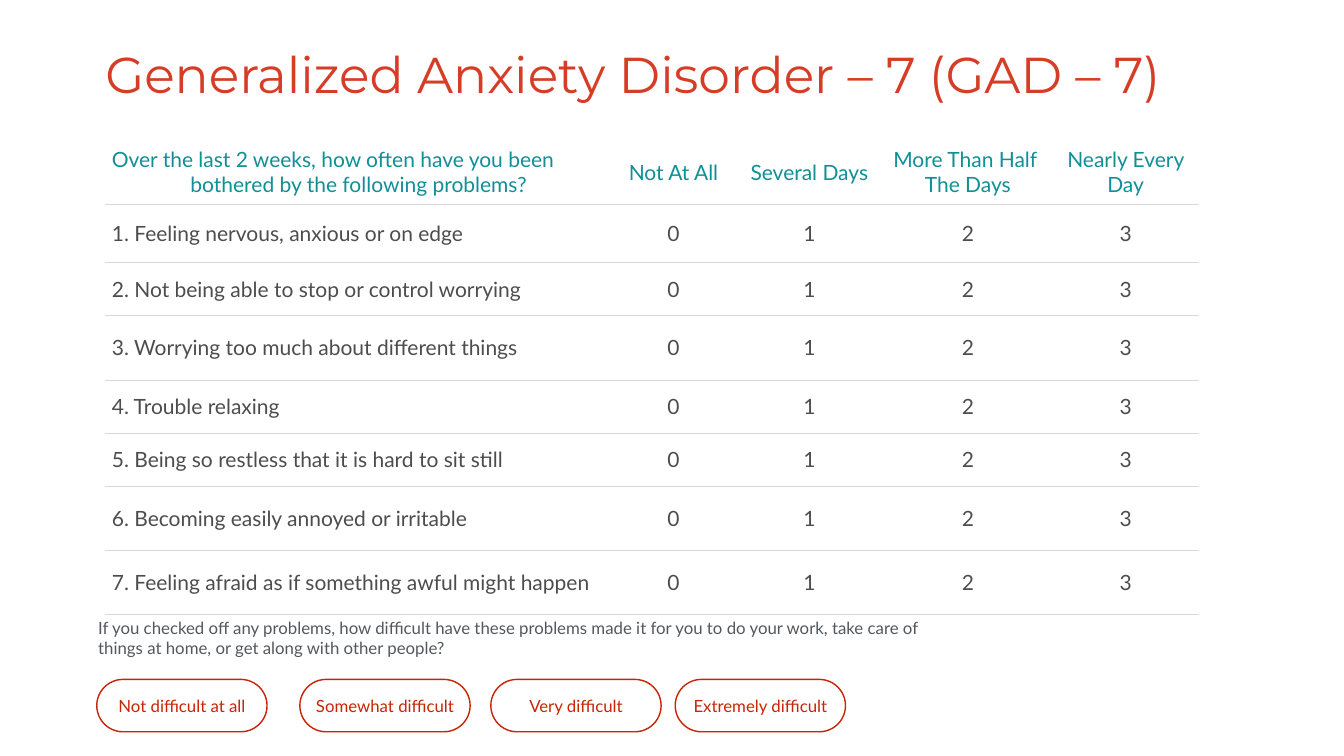
import pptx
import pptx.dml.color
import pptx.enum.shapes
import pptx.enum.text
import pptx.oxml
import pptx.oxml.ns
import pptx.util

RED = pptx.dml.color.RGBColor(0xD6, 0x3D, 0x26)
PILL_RED = pptx.dml.color.RGBColor(0xC8, 0x25, 0x06)
TEAL = pptx.dml.color.RGBColor(0x10, 0x90, 0x96)
DARK_GRAY = pptx.dml.color.RGBColor(0x4D, 0x4D, 0x4D)
SLATE = pptx.dml.color.RGBColor(0x53, 0x58, 0x5F)
RULE_GRAY = pptx.dml.color.RGBColor(0xD6, 0xD7, 0xD6)

LEFT = pptx.enum.text.PP_ALIGN.LEFT
CENTER = pptx.enum.text.PP_ALIGN.CENTER
MIDDLE = pptx.enum.text.MSO_ANCHOR.MIDDLE

deck = pptx.Presentation()
deck.slide_width = pptx.util.Inches(26.67)
deck.slide_height = pptx.util.Inches(15)
page = deck.slides.add_slide(deck.slide_layouts[5])

# The page is a grid of 100 columns by 100 rows.
COLUMN = deck.slide_width / 100
ROW = deck.slide_height / 100


def write(frame, text, size=24, font="Lato", color=DARK_GRAY, align=LEFT,
          spacing=None, hanging=None):
    """Fill a text frame with one formatted paragraph; \\v breaks a line."""
    para = frame.paragraphs[0]
    para.text = text
    para.alignment = align
    para.line_spacing = spacing
    for span in para.runs:
        span.font.size = pptx.util.Pt(size)
        span.font.name = font
        span.font.color.rgb = color
    if hanging:
        properties = para._p.get_or_add_pPr()
        properties.set("marL", str(hanging))
        properties.set("indent", str(-hanging))


def set_frame(frame, inset):
    frame.word_wrap = True
    frame.vertical_anchor = MIDDLE
    frame.margin_left = frame.margin_right = pptx.util.Inches(inset)
    frame.margin_top = frame.margin_bottom = pptx.util.Inches(inset)


# Title
title = page.shapes.title
title.left, title.top = int(7.76 * COLUMN), int(6.53 * ROW)
title.width, title.height = int(87.48 * COLUMN), int(8.4 * ROW)
set_frame(title.text_frame, 0.02)
title.text_frame.auto_size = pptx.enum.text.MSO_AUTO_SIZE.NONE
write(title.text_frame, "Generalized Anxiety Disorder – 7 (GAD – 7)",
      size=72, font="Montserrat", color=RED, spacing=0.7)

# Questionnaire table
headings = [
    "Over the last 2 weeks, how often have you been\vbothered by the following problems?",
    "Not At All", "Several Days", "More Than Half \vThe Days", "Nearly Every Day",
]
problems = [
    "Feeling nervous, anxious or on edge",
    "Not being able to stop or control worrying",
    "Worrying too much about different things",
    "Trouble relaxing",
    "Being so restless that it is hard to sit still",
    "Becoming easily annoyed or irritable",
    "Feeling afraid as if something awful might happen",
]
lines = [headings]
for number, problem in enumerate(problems, 1):
    lines.append([f"{number}. {problem}", "0", "1", "2", "3"])

column_widths = [37.76, 9.11, 11.1, 12.49, 10.99]
row_heights = [8.47, 7.73, 7, 8.53, 7, 7, 8.53, 8.53]
table = page.shapes.add_table(
    len(lines), len(headings), int(7.8 * COLUMN), int(18.47 * ROW),
    int(sum(column_widths) * COLUMN), int(sum(row_heights) * ROW)).table
table.first_row = False
table.horz_banding = False
for column, width in zip(table.columns, column_widths):
    column.width = int(width * COLUMN)
for row, height in zip(table.rows, row_heights):
    row.height = int(height * ROW)

namespace = pptx.oxml.ns.nsdecls("a")
rule_fill = f'<a:solidFill><a:srgbClr val="{RULE_GRAY}"/></a:solidFill>'
for row_index, line in enumerate(lines):
    is_header = row_index == 0
    for column_index, text in enumerate(line):
        is_question = column_index == 0
        cell = table.cell(row_index, column_index)
        cell.fill.background()
        cell.vertical_anchor = MIDDLE
        cell.margin_left = cell.margin_right = pptx.util.Inches(0.14)
        cell.margin_top = cell.margin_bottom = pptx.util.Inches(0.14)
        write(cell.text_frame, text, size=30,
              color=TEAL if is_header else DARK_GRAY,
              align=LEFT if is_question else CENTER,
              hanging=pptx.util.Inches(1.56) if is_header and is_question else None)
        ruled_sides = "B" if is_header else "TB"
        for position, side in enumerate("LRTB"):
            fill = rule_fill if side in ruled_sides else "<a:noFill/>"
            border = pptx.oxml.parse_xml(
                f'<a:ln{side} {namespace} w="{pptx.util.Pt(1)}">{fill}</a:ln{side}>')
            cell._tc.get_or_add_tcPr().insert(position, border)

# Follow-up question
note = page.shapes.add_textbox(int(7.01 * COLUMN), int(81.13 * ROW),
                               int(61.9 * COLUMN), int(6.4 * ROW))
set_frame(note.text_frame, 0.08)
write(note.text_frame,
      "If you checked off any problems, how difficult have these problems made it "
      "for you to do your work, take care of things at home, or get along with "
      "other people?", color=SLATE)

# Difficulty choices
choices = [
    ("Not difficult at all", 7.2), ("Somewhat difficult", 22.31),
    ("Very difficult", 36.52), ("Extremely difficult", 50.24),
]
for label, left in choices:
    pill = page.shapes.add_shape(
        pptx.enum.shapes.MSO_SHAPE.ROUNDED_RECTANGLE, int(left * COLUMN),
        int(89.87 * ROW), int(12.67 * COLUMN), int(6.93 * ROW))
    pill.adjustments[0] = 0.5
    pill.shadow.inherit = False
    pill.fill.background()
    pill.line.color.rgb = PILL_RED
    pill.line.width = pptx.util.Pt(2)
    set_frame(pill.text_frame, 0.08)
    write(pill.text_frame, label, color=PILL_RED, align=CENTER)

deck.save("out.pptx")
